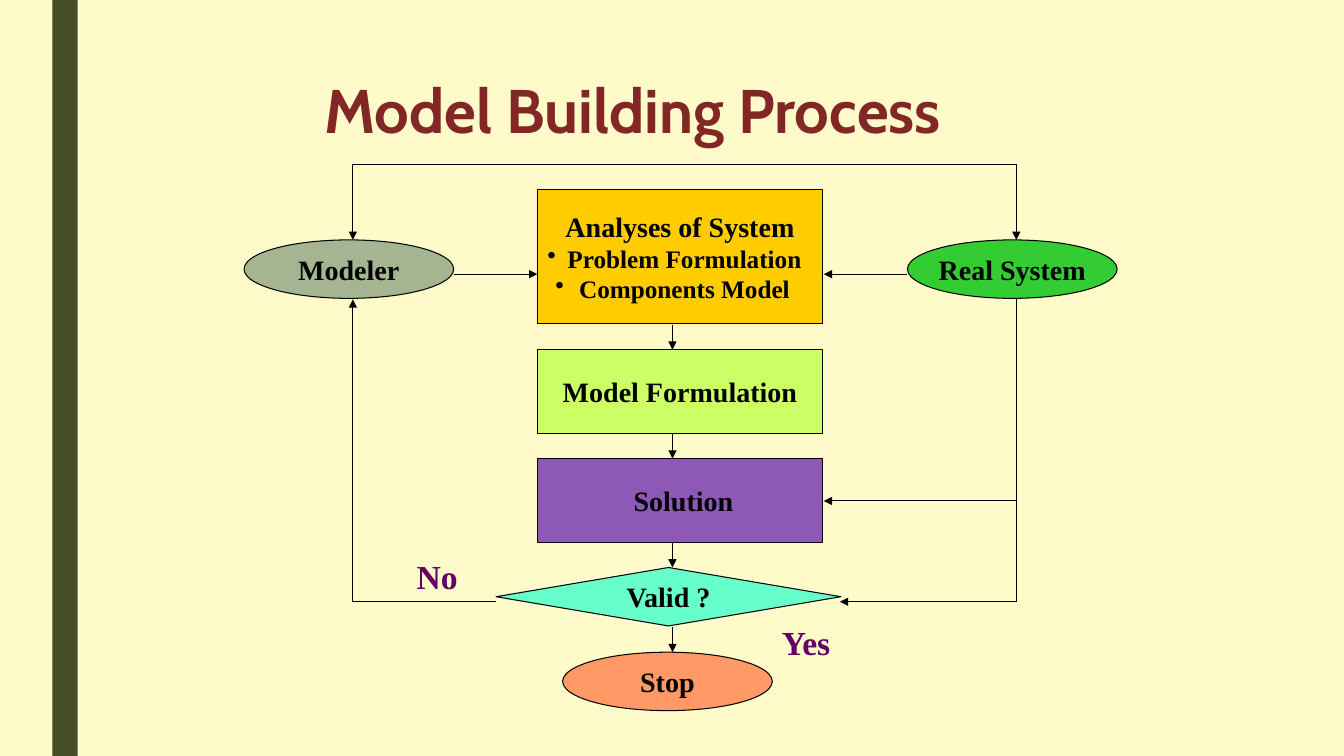
from dataclasses import dataclass

from lxml import etree
from pptx import Presentation
from pptx.dml.color import RGBColor
from pptx.enum.shapes import MSO_CONNECTOR, MSO_SHAPE
from pptx.enum.text import MSO_ANCHOR, PP_ALIGN
from pptx.oxml.ns import qn
from pptx.util import Inches, Pt

RECT, OVAL, DIAMOND = MSO_SHAPE.RECTANGLE, MSO_SHAPE.OVAL, MSO_SHAPE.DIAMOND
STRAIGHT = MSO_CONNECTOR.STRAIGHT
CENTER, MIDDLE = PP_ALIGN.CENTER, MSO_ANCHOR.MIDDLE

CREAM = RGBColor(0xFE, 0xFA, 0xC9)
OLIVE = RGBColor(0x44, 0x4D, 0x26)
MAROON = RGBColor(0x82, 0x26, 0x26)
PLUM = RGBColor(0x66, 0x00, 0x66)
BLACK = RGBColor(0x00, 0x00, 0x00)
SAGE = RGBColor(0xA5, 0xB5, 0x92)
GREEN = RGBColor(0x33, 0xCC, 0x33)
AMBER = RGBColor(0xFF, 0xCC, 0x00)
LIME = RGBColor(0xCC, 0xFF, 0x66)
VIOLET = RGBColor(0x8E, 0x58, 0xB6)
AQUA = RGBColor(0x66, 0xFF, 0xCC)
SALMON = RGBColor(0xFF, 0x99, 0x66)

TITLE_FONT, BODY_FONT = "Cabin", "Times New Roman"
LINE_WIDTH = Pt(0.75)

MODELER_X, FLOW_X, SYSTEM_X = 3.5, 6.67, 10.08
BOX_X, BOX_W, BOX_H = 5.33, 2.83, 0.83
OVAL_W, OVAL_H = 2.08, 0.58
TOP_Y, INPUT_Y, RETURN_Y = 1.63, 2.72, 5.97
OVAL_TOP, OVAL_BOTTOM = 2.38, 2.97


@dataclass
class Node:
    text: str
    kind: int
    x: float
    y: float
    w: float
    h: float
    fill: RGBColor
    bullets: tuple[str, ...] = ()


@dataclass
class Link:
    x1: float
    y1: float
    x2: float
    y2: float
    arrow: bool = True


NODES = [
    Node("Modeler", OVAL, 2.42, OVAL_TOP, OVAL_W, OVAL_H, SAGE),
    Node("Real System", OVAL, 9, OVAL_TOP, OVAL_W, OVAL_H, GREEN),
    Node("Analyses of System", RECT, BOX_X, 1.88, BOX_W, 1.33, AMBER,
         ("Problem Formulation", "Components Model")),
    Node("Model Formulation", RECT, BOX_X, 3.47, BOX_W, BOX_H, LIME),
    Node(" Solution", RECT, BOX_X, 4.55, BOX_W, BOX_H, VIOLET),
    Node("Valid ?", DIAMOND, 4.92, 5.63, 3.42, 0.58, AQUA),
    Node("Stop", OVAL, 5.58, 6.47, OVAL_W, OVAL_H, SALMON),
]

FLOW_GAPS = [(3.22, 3.47), (4.3, 4.55), (5.38, 5.63), (6.22, 6.47)]

LINKS = [Link(FLOW_X, top, FLOW_X, bottom) for top, bottom in FLOW_GAPS] + [
    Link(9, INPUT_Y, 8.17, INPUT_Y),
    Link(4.5, INPUT_Y, BOX_X, INPUT_Y),
    Link(4.92, RETURN_Y, MODELER_X, RETURN_Y, arrow=False),
    Link(MODELER_X, RETURN_Y, MODELER_X, OVAL_BOTTOM),
    Link(SYSTEM_X, OVAL_BOTTOM, SYSTEM_X, RETURN_Y, arrow=False),
    Link(SYSTEM_X, RETURN_Y, 8.33, RETURN_Y),
    Link(SYSTEM_X, 4.97, 8.17, 4.97),
    Link(MODELER_X, TOP_Y, SYSTEM_X, TOP_Y, arrow=False),
    Link(MODELER_X, TOP_Y, MODELER_X, OVAL_TOP),
    Link(SYSTEM_X, TOP_Y, SYSTEM_X, OVAL_TOP),
]


def format_text(p, size: float, color: RGBColor, font: str = BODY_FONT) -> None:
    for r in p.runs:
        r.font.name = font
        r.font.size = Pt(size)
        r.font.bold = True
        r.font.color.rgb = color


def add_filled(s, kind: int, x: float, y: float, w: float, h: float, fill: RGBColor):
    sp = s.shapes.add_shape(kind, Inches(x), Inches(y), Inches(w), Inches(h))
    sp.shadow.inherit = False
    sp.fill.solid()
    sp.fill.fore_color.rgb = fill
    sp.line.fill.background()
    return sp


def add_node(s, node: Node) -> None:
    sp = add_filled(s, node.kind, node.x, node.y, node.w, node.h, node.fill)
    sp.line.color.rgb = BLACK
    sp.line.width = LINE_WIDTH
    tf = sp.text_frame
    tf.word_wrap = False
    tf.vertical_anchor = MIDDLE
    tf.text = "\n".join((node.text, *node.bullets))
    for i, p in enumerate(tf.paragraphs):
        p.alignment = CENTER
        format_text(p, 18 if i else 20, BLACK)
        if i:
            etree.SubElement(p._p.get_or_add_pPr(), qn("a:buChar")).set("char", "•")


def add_link(s, link: Link) -> None:
    line = s.shapes.add_connector(STRAIGHT, Inches(link.x1), Inches(link.y1),
                                  Inches(link.x2), Inches(link.y2))
    line.line.color.rgb = BLACK
    line.line.width = LINE_WIDTH
    if link.arrow:
        etree.SubElement(line.line._get_or_add_ln(), qn("a:tailEnd")).set("type", "triangle")
    etree.SubElement(line._element.spPr, qn("a:effectLst"))


def add_label(s, text: str, x: float, y: float, w: float, h: float):
    """Add a wrapping text box and return its paragraph."""
    tf = s.shapes.add_textbox(Inches(x), Inches(y), Inches(w), Inches(h)).text_frame
    tf.word_wrap = True
    tf.text = text
    return tf.paragraphs[0]


def main() -> None:
    prs = Presentation()
    prs.slide_width, prs.slide_height = Inches(13.33), Inches(7.5)
    s = prs.slides.add_slide(prs.slide_layouts[6])
    s.background.fill.solid()
    s.background.fill.fore_color.rgb = CREAM

    add_filled(s, RECT, 0.52, 0, 0.25, 7.5, OLIVE)
    title = add_label(s, "Model Building Process", 3.12, 0.75, 8.33, 0.83)
    title.line_spacing = 0.89
    format_text(title, 44, MAROON, TITLE_FONT)

    for node in NODES:
        add_node(s, node)
    for link in LINKS:
        add_link(s, link)
    for text, x, y in (("No", 3.92, 5.47), ("Yes", 7.58, 6.12)):
        p = add_label(s, text, x, y, 0.83, 0.5)
        p.alignment = CENTER
        p.space_before = Pt(2)
        format_text(p, 24, PLUM)

    prs.save("out.pptx")


if __name__ == "__main__":
    main()
